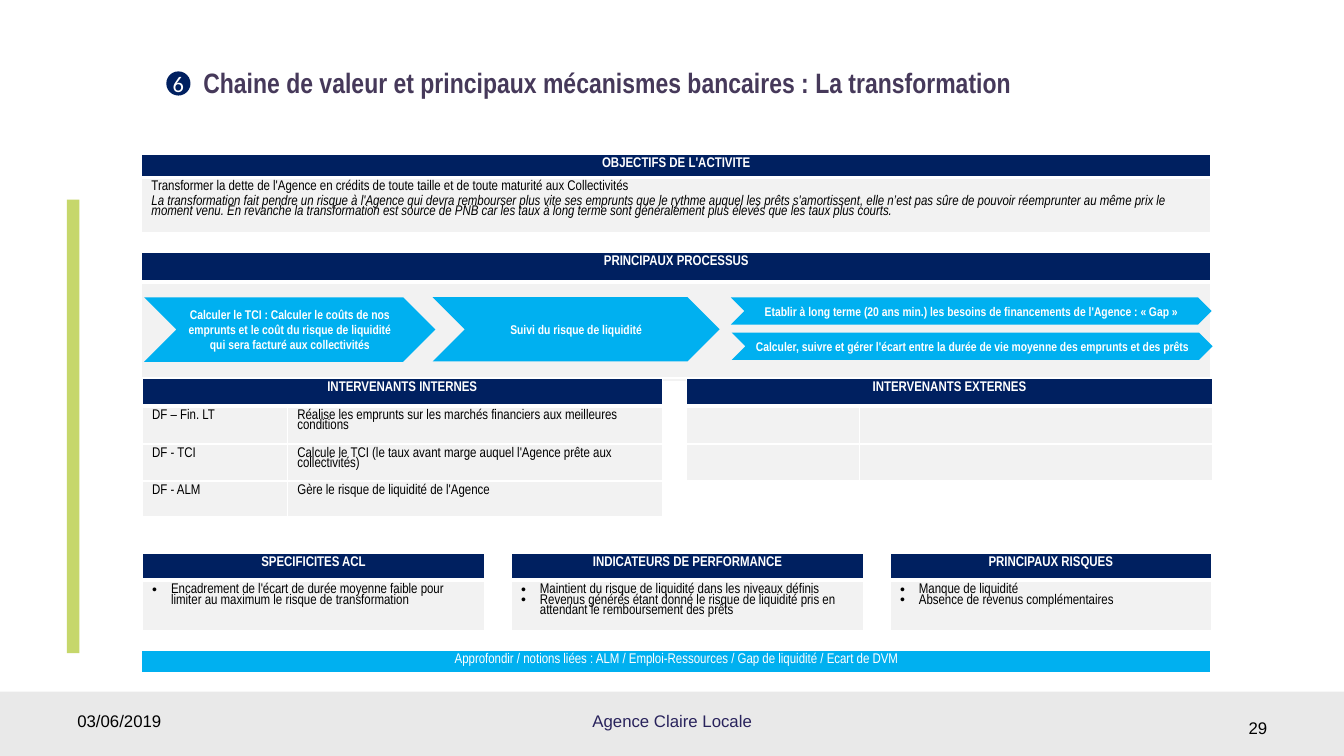
"""Build the slide on the bank's transformation activity."""
from lxml import etree
from pptx import Presentation
from pptx.dml.color import RGBColor
from pptx.enum.shapes import MSO_SHAPE
from pptx.enum.text import MSO_ANCHOR, MSO_AUTO_SIZE, PP_ALIGN
from pptx.oxml.ns import qn
from pptx.util import Pt

LEFT, CENTER, RIGHT = PP_ALIGN.LEFT, PP_ALIGN.CENTER, PP_ALIGN.RIGHT
TOP, MIDDLE = MSO_ANCHOR.TOP, MSO_ANCHOR.MIDDLE
RECTANGLE, OVAL, CHEVRON = MSO_SHAPE.RECTANGLE, MSO_SHAPE.OVAL, MSO_SHAPE.CHEVRON
NO_AUTOFIT = MSO_AUTO_SIZE.NONE

NAVY, SKY, PALE, WHITE, BLACK = "002060", "00B0F0", "F2F2F2", "FFFFFF", "000000"
GREEN, GREY, PURPLE, INDIGO = "C6D76B", "E9E9E9", "46395A", "29235C"
NARROW = "Arial Narrow"

TITLE = "Chaine de valeur et principaux mécanismes bancaires : La transformation"
EXPLANATION = (
    "La transformation fait pendre un risque à l'Agence qui devra rembourser plus vite ses "
    "emprunts que le rythme auquel les prêts s'amortissent, elle n’est pas sûre de pouvoir "
    "réemprunter au même prix le moment venu. En revanche la transformation est source de PNB "
    "car les taux à long terme sont généralement plus élevés que les taux plus courts."
)
GAP = None
EMPTY = ("",)

TABLES = [
    dict(left=101, top=110, columns=[764], heights=[16.6, 38], cells=[
        [("OBJECTIFS DE L'ACTIVITE",)],
        [("Transformer la dette de l'Agence en crédits de toute taille et de toute maturité "
          "aux Collectivités", EXPLANATION)],
    ]),
    dict(left=101, top=180, columns=[764], heights=[21.6, 71], cells=[
        [("PRINCIPAUX PROCESSUS",)],
        [EMPTY],
    ]),
    dict(left=101.5, top=270, columns=[103.7, 267.8, 16.6, 123.8, 252],
         heights=[20.2, 27, 25.6, 25.2], merged=[(0, 1), (3, 4)], cells=[
        [("INTERVENANTS INTERNES",), EMPTY, GAP, ("INTERVENANTS EXTERNES",), EMPTY],
        [("DF – Fin. LT",),
         ("Réalise les emprunts sur les marchés financiers aux meilleures conditions",),
         GAP, EMPTY, EMPTY],
        [("DF - TCI",),
         ("Calcule le TCI (le taux avant marge auquel l'Agence prête aux collectivités)",),
         GAP, EMPTY, EMPTY],
        [("DF - ALM",), ("Gère le risque de liquidité de l'Agence",), GAP, GAP, GAP],
    ]),
    dict(left=101.5, top=395.3, columns=[244.8, 18.7, 252, 18.7, 229.7],
         heights=[16.6, 35], bulleted=True, cells=[
        [("SPECIFICITES ACL",), GAP, ("INDICATEURS DE PERFORMANCE",), GAP,
         ("PRINCIPAUX RISQUES",)],
        [("Encadrement de l'écart de durée moyenne faible pour limiter au maximum le risque "
          "de transformation",), GAP,
         ("Maintient du risque de liquidité dans les niveaux définis",
          "Revenus générés étant donné le risque de liquidité pris en attendant le "
          "remboursement des prêts"), GAP,
         ("Manque de liquidité", "Absence de revenus complémentaires")],
    ]),
    dict(left=101, top=464.4, columns=[764], heights=[16.6], header=SKY, bold=False, cells=[
        [("Approfondir / notions liées : ALM / Emploi-Ressources / Gap de liquidité / "
          "Ecart de DVM",)],
    ]),
]

PROCESSES = [
    ("Calculer le TCI : Calculer le coûts de nos emprunts et le coût du risque de liquidité "
     "qui sera facturé aux collectivités", 103, 212.4, 208, 46),
    ("Suivi du risque de liquidité", 309, 212.2, 205, 46),
    ("Calculer, suivre et gérer l'écart entre la durée de vie moyenne des emprunts et des prêts",
     522.7, 237.6, 343.5, 19.5),
    ("Etablir à long terme (20 ans min.) les besoins de financements de l'Agence : «\u00a0Gap\u00a0»"
     .replace("\u00a0", chr(160)), 522, 212.4, 343.5, 19.5),
]

FOOTERS = [
    ("Agence Claire Locale", 328.3, 500.4, 303.8, CENTER, INDIGO),
    ("03/06/2019", 48.2, 500.4, 224, LEFT, BLACK),
    ("29", 688.3, 505.4, 224, RIGHT, BLACK),
]


def rgb(value):
    return RGBColor.from_string(value)


def write(paragraph, text, size, color, font=NARROW, bold=False, align=LEFT):
    paragraph.text = text
    paragraph.alignment = align
    paragraph.font.size = Pt(size)
    paragraph.font.name = font
    paragraph.font.bold = bold
    paragraph.font.color.rgb = rgb(color)


def add_shape(slide, kind, box, fill):
    shape = slide.shapes.add_shape(kind, *map(Pt, box))
    shape.shadow.inherit = False
    shape.fill.solid()
    shape.fill.fore_color.rgb = rgb(fill)
    shape.line.fill.background()
    return shape


def add_bullet(paragraph):
    properties = paragraph._p.get_or_add_pPr()
    properties.set("marL", str(Pt(13.5)))
    properties.set("indent", str(-Pt(13.5)))
    etree.SubElement(properties, qn("a:buFont"), typeface="Arial")
    etree.SubElement(properties, qn("a:buChar"), char="•")


def add_borders(cell, bottom):
    properties = cell._tc.get_or_add_tcPr()
    for side, width in (("L", 1), ("R", 1), ("T", 1), ("B", bottom)):
        line = etree.SubElement(properties, qn(f"a:ln{side}"), w=str(Pt(width)))
        fill = etree.SubElement(line, qn("a:solidFill"))
        etree.SubElement(fill, qn("a:srgbClr"), val=WHITE)


def fill_cell(cell, lines, is_header, header, bold, bulleted):
    add_borders(cell, 3 if is_header else 1)
    if lines is GAP:
        cell.fill.background()
    else:
        cell.fill.solid()
        cell.fill.fore_color.rgb = rgb(header if is_header else PALE)
    frame = cell.text_frame
    for index, text in enumerate(lines or EMPTY):
        paragraph = frame.add_paragraph() if index else frame.paragraphs[0]
        paragraph.line_spacing = 0.8
        if bulleted and text and not is_header:
            add_bullet(paragraph)
        write(paragraph, text, 10, WHITE if is_header else BLACK,
              bold=is_header and bold, align=CENTER if is_header else LEFT)
        if text == EXPLANATION:
            paragraph.space_before = Pt(3)
            paragraph.font.italic = True
        if not text:
            etree.SubElement(paragraph._p, qn("a:endParaRPr"), sz="1000")


def add_section(slide, left, top, columns, heights, cells, merged=(),
                header=NAVY, bold=True, bulleted=False):
    box = map(Pt, (left, top, sum(columns), sum(heights)))
    table = slide.shapes.add_table(len(heights), len(columns), *box).table
    table.horz_banding = False
    for column, width in zip(table.columns, columns):
        column.width = Pt(width)
    for r, (height, row) in enumerate(zip(heights, cells)):
        table.rows[r].height = Pt(height)
        for c, lines in enumerate(row):
            fill_cell(table.cell(r, c), lines, r == 0, header, bold, bulleted)
    for first, last in merged:
        table.cell(0, first).merge(table.cell(0, last))


def add_process(slide, text, *box):
    chevron = add_shape(slide, CHEVRON, box, SKY)
    frame = chevron.text_frame
    is_tall = box[-1] > 30
    frame.word_wrap = is_tall
    frame.margin_left = frame.margin_right = Pt(7.2 if is_tall else 3)
    frame.margin_top = frame.margin_bottom = 0
    frame.vertical_anchor = MIDDLE
    write(frame.paragraphs[0], text, 9, WHITE, bold=True, align=CENTER)


def add_footer(slide, text, left, top, width, align, color):
    frame = slide.shapes.add_textbox(*map(Pt, (left, top, width, 28.8))).text_frame
    frame.word_wrap = True
    frame.vertical_anchor = MIDDLE
    write(frame.paragraphs[0], text, 12, color, font="Arial", align=align)


def add_heading(slide):
    title = slide.shapes.title
    title.left, title.top, title.width, title.height = map(Pt, (138, 46, 820, 36.7))
    frame = title.text_frame
    frame.auto_size = NO_AUTOFIT
    frame.vertical_anchor = TOP
    write(frame.paragraphs[0], TITLE, 20, PURPLE, bold=True)
    frame.paragraphs[0].line_spacing = 0.9

    badge = add_shape(slide, OVAL, (118.8, 51, 17.3, 17.3), NAVY).text_frame
    badge.word_wrap = False
    badge.margin_left = badge.margin_right = badge.margin_top = badge.margin_bottom = 0
    badge.vertical_anchor = MIDDLE
    write(badge.paragraphs[0], "6", 16, WHITE, font="Calibri", align=CENTER)


def main():
    deck = Presentation()
    deck.slide_width, deck.slide_height = Pt(960), Pt(540)
    slide = deck.slides.add_slide(deck.slide_layouts[5])
    add_shape(slide, RECTANGLE, (0, 494, 960, 46), GREY)
    add_shape(slide, RECTANGLE, (47.8, 142.6, 9, 324), GREEN)
    add_heading(slide)
    for footer in FOOTERS:
        add_footer(slide, *footer)
    for section in TABLES:
        add_section(slide, **section)
    for process in PROCESSES:
        add_process(slide, *process)
    deck.save("out.pptx")


if __name__ == "__main__":
    main()
